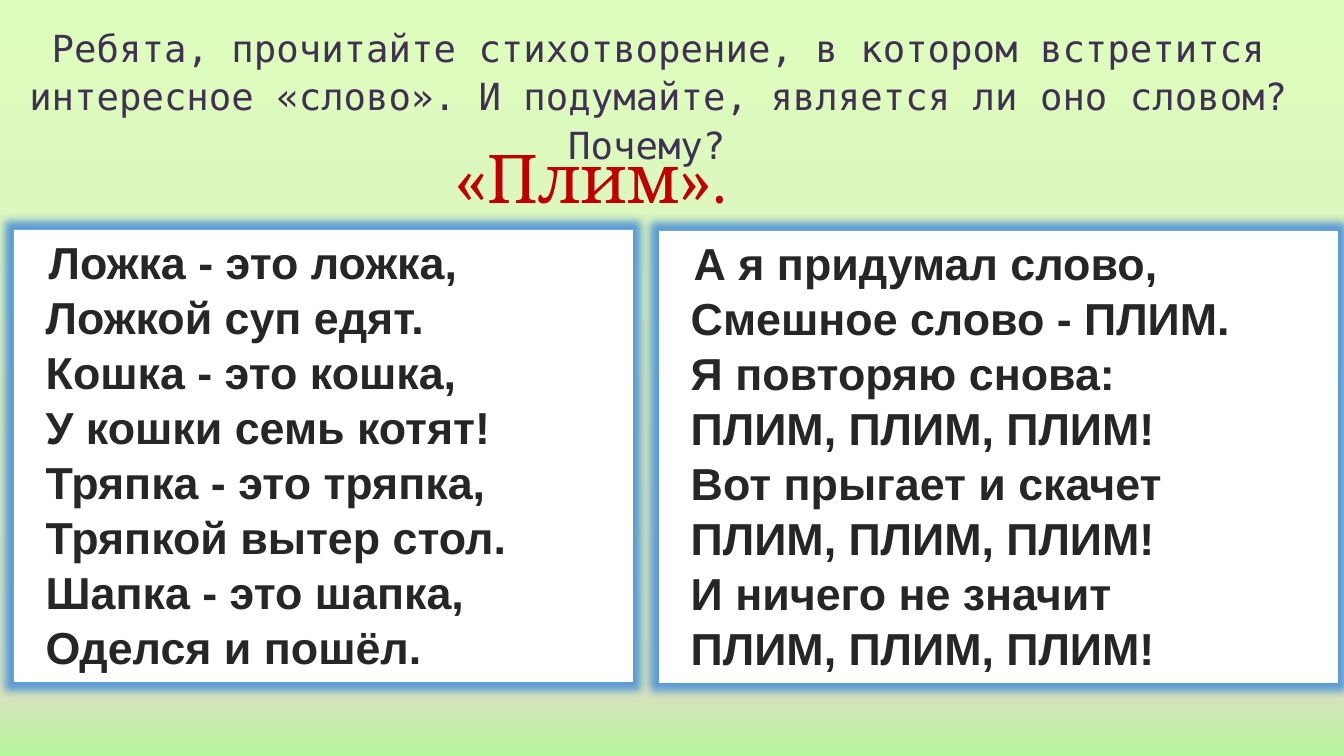
from copy import deepcopy

from pptx import Presentation
from pptx import util as u
from pptx.dml.color import RGBColor
from pptx.enum import text
from pptx.oxml import parse_xml
from pptx.oxml.ns import nsdecls, qn

SCALE = 914400 / 67.2  # EMU in one px
WHITE = RGBColor(0xFF, 0xFF, 0xFF)
VIOLET = RGBColor(0x40, 0x31, 0x52)
CHARCOAL = RGBColor(0x26, 0x26, 0x26)
RED = RGBColor(0xC0, 0x00, 0x00)
GLOW = RGBColor(0x5B, 0x9B, 0xD5)
BACKDROP = [(0, RGBColor(0xB6, 0xF6, 0x9C)),
            (0.08, RGBColor(0xD7, 0xE4, 0xBD)),
            (1, RGBColor(0xDE, 0xFE, 0xBE))]

QUESTION = ("Ребята, прочитайте стихотворение, в котором встретится интересное "
            "«слово». И подумайте, является ли оно словом? Почему? ")
THINGS_VERSE = ["Ложка - это ложка,", "Ложкой суп едят.", "Кошка - это кошка,",
                "У кошки семь котят!", "Тряпка - это тряпка,",
                "Тряпкой вытер стол.", "Шапка - это шапка,", "Оделся и пошёл."]
REFRAIN = "ПЛИМ, ПЛИМ, ПЛИМ!"
PLIM_VERSE = ["А я придумал слово,", "Смешное слово - ПЛИМ.", "Я повторяю снова:",
              REFRAIN, "Вот прыгает и скачет", REFRAIN, "И ничего не значит", REFRAIN]


def px(n):
    return u.Emu(round(n * SCALE))


def write(frame, lines, *, font, size, color, bold=False, spacing=None,
          align=text.PP_ALIGN.LEFT, margin=0, first=0, inset=None):
    """Fill a text frame, one paragraph per line; first shifts the opening line."""
    frame.word_wrap = True
    frame.auto_size = text.MSO_AUTO_SIZE.NONE
    frame.vertical_anchor = text.MSO_ANCHOR.TOP
    if inset is not None:
        frame.margin_left = frame.margin_right = px(inset)
        frame.margin_top = frame.margin_bottom = px(inset)
    for i, line in enumerate(lines):
        par = frame.paragraphs[0] if i == 0 else frame.add_paragraph()
        par.alignment = align
        par.space_before = par.space_after = u.Pt(0)
        if spacing:
            par.line_spacing = u.Pt(spacing)
        props = par._p.get_or_add_pPr()
        props.set("marL", str(px(margin)))
        props.set("indent", str(px(first if i == 0 else 0)))
        props.append(parse_xml(f"<a:buNone {nsdecls('a')}/>"))
        run = par.add_run()
        run.text = line
        run.font.name, run.font.size, run.font.bold = font, u.Pt(size), bold
        run.font.color.rgb = color


class Lesson:
    def __init__(self, prs):
        self.slide = prs.slides.add_slide(prs.slide_layouts[3])

    def place(self, shape, box):
        shape.left, shape.top, shape.width, shape.height = map(px, box)
        return shape

    def background(self, stops):
        fill = self.slide.background.fill
        fill.gradient()
        fill.gradient_angle = 90
        start = next(self.slide.element.iter(qn("a:gs")))
        start.addnext(deepcopy(start))
        for stop, (position, color) in zip(fill.gradient_stops, stops):
            stop.position, stop.color.rgb = position, color

    def title(self, wording, box):
        heading = self.place(self.slide.shapes.title, box)
        write(heading.text_frame, [wording], font="DejaVu Sans Mono", size=40,
              color=VIOLET, spacing=52, align=text.PP_ALIGN.CENTER)

    def verse(self, index, lines, box):
        panel = self.place(self.slide.placeholders[index], box)
        panel.fill.solid()
        panel.fill.fore_color.rgb = WHITE
        panel._element.spPr.append(parse_xml(
            f'<a:effectLst {nsdecls("a")}><a:glow rad="{u.Pt(18)}">'
            f'<a:srgbClr val="{GLOW}"/></a:glow></a:effectLst>'))
        write(panel.text_frame, lines, font="Arial", size=48, color=CHARCOAL,
              bold=True, spacing=59, margin=25, first=3)

    def funny_word(self, wording, box):
        word = self.slide.shapes.add_textbox(*map(px, box))
        write(word.text_frame, [wording], font="Cambria", size=72, color=RED,
              margin=237, inset=0)


def main():
    prs = Presentation()
    prs.slide_width, prs.slide_height = px(1344), px(756)
    lesson = Lesson(prs)
    lesson.background(BACKDROP)

    # Question and the made-up word
    lesson.title(QUESTION, (15, 18, 1286, 154))
    lesson.funny_word("«Плим».", (217, 136, 1072, 81))

    # The two halves of the poem
    lesson.verse(1, THINGS_VERSE, (14, 230, 619, 452))
    lesson.verse(2, PLIM_VERSE, (659, 231, 679, 452))

    # Unused date, footer and number fields
    for spare in list(lesson.slide.placeholders):
        if not spare.text_frame.text:
            spare._element.getparent().remove(spare._element)
    prs.save("out.pptx")


if __name__ == "__main__":
    main()
